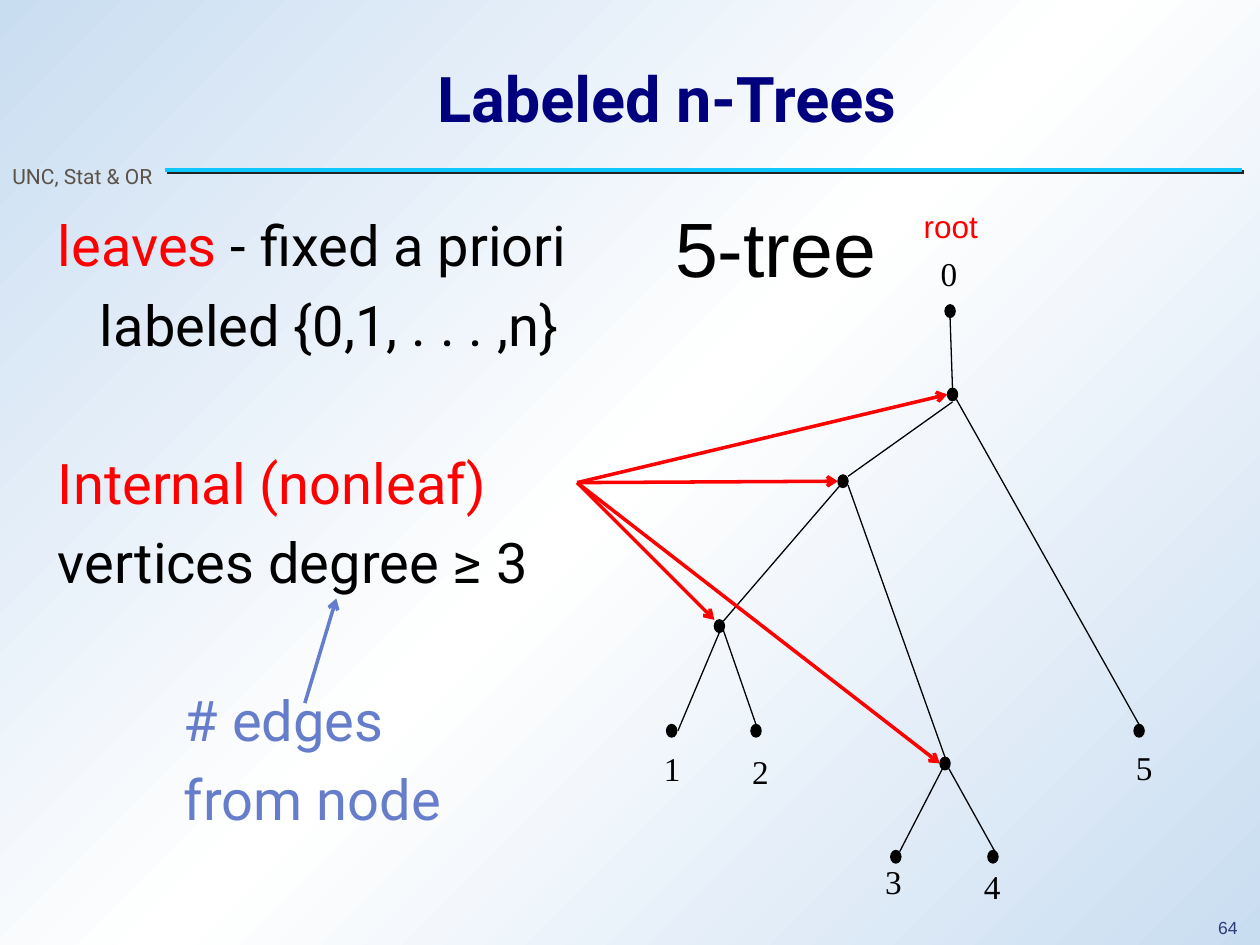
from copy import deepcopy

from lxml import etree
from pptx import Presentation
from pptx.dml.color import RGBColor
from pptx.enum.shapes import MSO_CONNECTOR, MSO_SHAPE
from pptx.enum.text import MSO_ANCHOR, MSO_AUTO_SIZE, PP_ALIGN
from pptx.oxml.ns import qn
from pptx.util import Pt

STRAIGHT = MSO_CONNECTOR.STRAIGHT
OVAL = MSO_SHAPE.OVAL
MIDDLE, TOP = MSO_ANCHOR.MIDDLE, MSO_ANCHOR.TOP
FIXED = MSO_AUTO_SIZE.NONE
LEFT, CENTER = PP_ALIGN.LEFT, PP_ALIGN.CENTER

BLACK, RED, BLUE, NAVY = "000000", "FF0000", "657DCA", "00007F"
GAP = 7.1
WIDE_GAP = 51.7

BODY = [
    (0, 0, [("leaves ", RED), ("- fixed a priori", BLACK)]),
    (24, GAP, [("labeled {0,1, . . . ,n}", BLACK)]),
    (0, WIDE_GAP, [("Internal (nonleaf)", RED)]),
    (0, GAP, [("vertices degree ≥ 3", BLACK)]),
    (72, WIDE_GAP, [("# edges", BLUE)]),
    (72, GAP, [("from node", BLUE)]),
]
NODES = [
    (540, 174.2), (541.4, 221.8), (478.8, 271.4), (648, 414), (537.1, 432.7),
    (408.2, 354.2), (429.1, 414), (509, 486), (380.9, 414), (564.5, 486),
]
EDGES = [
    ((542.9, 181.4), (544.3, 221.8)),
    ((484.6, 272.2), (544.3, 229.7)),
    ((413.3, 355), (480.2, 277.2)),
    ((546.5, 228.2), (650.9, 414)),
    ((484.6, 277.2), (540, 432.7)),
    ((411.1, 361.4), (387.4, 417.6)),
    ((413.3, 360), (432, 414)),
    ((538.6, 439.2), (514.1, 486.7)),
    ((542.2, 439.2), (570.2, 489.6)),
]
LEAF_LABELS = [
    ("0", 542.2, 156.2), ("1", 384.1, 439.2), ("2", 434.5, 440.6),
    ("3", 510.5, 503.3), ("4", 567, 506.5), ("5", 653.8, 438.5),
]
ARROW_START = (329.8, 275.8)
INTERNAL_NODES = [(478.8, 275), (537.1, 436.3), (541.4, 225.4), (408.2, 354.2)]


def color(value):
    return RGBColor.from_string(value)


class TreeSlide:
    heading_font = "Roboto"
    label_font = "Arial"
    digit_font = "Times New Roman"

    def __init__(self, deck):
        self.page = deck.slides.add_slide(deck.slide_layouts[1])

    def background(self, edge, middle):
        fill = self.page.background.fill
        fill.gradient()
        fill.gradient_angle = 315
        first, second = fill.gradient_stops
        first.position, second.position = 0, 0.5
        first.color.rgb, second.color.rgb = color(edge), color(middle)
        stops = next(self.page.element.iter(qn("a:gsLst")))
        last = deepcopy(stops[0])
        last.set("pos", "100000")
        stops.append(last)

    def place(self, shape, left, top, width, height):
        shape.left, shape.top = Pt(left), Pt(top)
        shape.width, shape.height = Pt(width), Pt(height)

    def style(self, para, name, size, value=None, bold=False):
        font = para.font
        font.name, font.size, font.bold = name, Pt(size), bold
        if value:
            font.color.rgb = color(value)

    def title(self, text, *frame):
        box = self.page.shapes.title
        self.place(box, *frame)
        box.text_frame.auto_size = FIXED
        box.text_frame.vertical_anchor = MIDDLE
        para = box.text_frame.paragraphs[0]
        para.text, para.alignment = text, CENTER
        self.style(para, self.heading_font, 36, NAVY, True)

    def body(self, rows, *frame):
        box = self.page.placeholders[1]
        self.place(box, *frame)
        text_frame = box.text_frame
        text_frame.auto_size = FIXED
        text_frame.vertical_anchor = TOP
        text_frame.margin_top = Pt(6.6)
        for index, (indent, before, spans) in enumerate(rows):
            para = text_frame.add_paragraph() if index else text_frame.paragraphs[0]
            properties = para._p.get_or_add_pPr()
            properties.set("marL", str(Pt(indent)))
            properties.set("indent", "0")
            etree.SubElement(properties, qn("a:buNone"))
            para.alignment = LEFT
            para.space_before = Pt(before)
            self.style(para, self.heading_font, 32)
            for text, value in spans:
                span = para.add_run()
                span.text = text
                span.font.color.rgb = color(value)

    def label(self, text, frame, name, size, value, align=LEFT, wrap=True):
        box = self.page.shapes.add_textbox(*map(Pt, frame))
        box.text_frame.word_wrap = wrap
        para = box.text_frame.paragraphs[0]
        para.text, para.alignment = text, align
        self.style(para, name, size, value)
        return box.text_frame

    def digit(self, text, x, y):
        text_frame = self.label(text, (x - 10, y - 12, 20, 24),
                                self.digit_font, 19, BLACK, CENTER)
        text_frame.vertical_anchor = MIDDLE
        text_frame.margin_left = text_frame.margin_right = 0
        text_frame.margin_top = text_frame.margin_bottom = 0

    def node(self, left, top):
        dot = self.page.shapes.add_shape(OVAL, Pt(left), Pt(top), Pt(5.8), Pt(7.2))
        dot.shadow.inherit = False
        dot.fill.solid()
        dot.fill.fore_color.rgb = color(BLACK)
        dot.line.color.rgb = color(BLACK)
        dot.line.width = Pt(0.75)

    def line(self, start, end, value=BLACK, width=0.75, arrow=False, shadow=None):
        connector = self.page.shapes.add_connector(STRAIGHT, *map(Pt, start + end))
        connector.line.color.rgb = color(value)
        connector.line.width = Pt(width)
        if arrow:
            etree.SubElement(connector.line._get_or_add_ln(), qn("a:tailEnd"), type="arrow")
        effects = etree.SubElement(connector._element.spPr, qn("a:effectLst"))
        if shadow:
            outer = etree.SubElement(effects, qn("a:outerShdw"), dist=str(Pt(1.4)),
                                     dir="2700000", algn="ctr", rotWithShape="0")
            etree.SubElement(outer, qn("a:srgbClr"), val=shadow)


def main():
    deck = Presentation()
    deck.slide_width, deck.slide_height = Pt(720), Pt(540)
    slide = TreeSlide(deck)
    slide.background("C9DDF1", "FFFFFF")
    slide.line((94.3, 97.2), (709.9, 97.2), "0FC7FF", 2.25, shadow="232323")
    number = slide.label("64", (689, 522, 26.6, 18), slide.label_font, 10, "2A3D7A", wrap=False)
    number.paragraphs[0].line_spacing = 0.9
    slide.label("UNC, Stat & OR", (0, 90, 97.2, 21.6), slide.heading_font, 12, "5B5249", wrap=False)
    slide.title("Labeled n-Trees", 131.8, 36, 498.2, 38.9)
    slide.body(BODY, 25.9, 113.8, 352.1, 401.8)
    for node in NODES:
        slide.node(*node)
    for start, end in EDGES:
        slide.line(start, end)
    for leaf in LEAF_LABELS:
        slide.digit(*leaf)
    slide.label("root", (470.9, 114.5, 144.7, 28.8), slide.label_font, 18, RED, CENTER)
    slide.label("5-tree", (378.7, 110.9, 142.6, 60.5), slide.label_font, 44, BLACK)
    for target in INTERNAL_NODES:
        slide.line(ARROW_START, target, RED, 2, arrow=True)
    slide.line((174.2, 401.8), (192.2, 342), BLUE, 2, arrow=True)
    deck.save("out.pptx")


if __name__ == "__main__":
    main()
